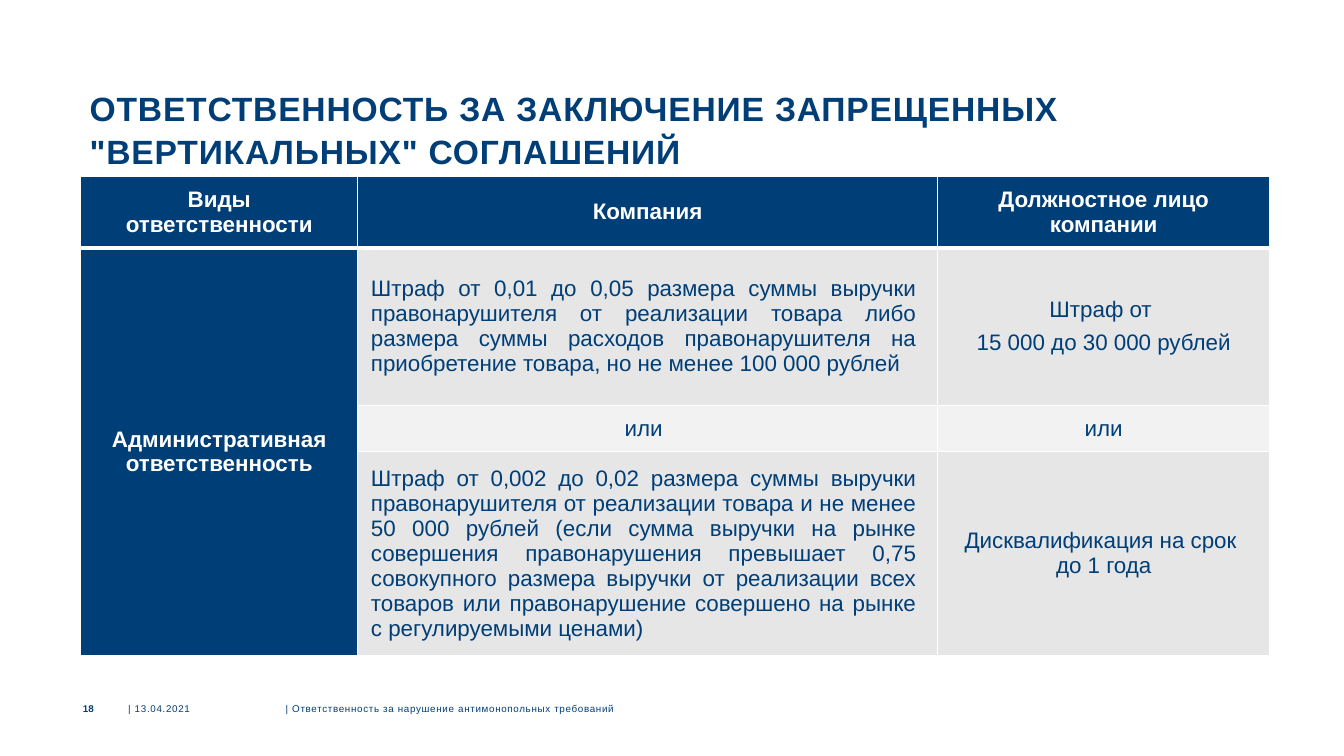
from lxml import etree
from pptx import Presentation
from pptx.dml.color import RGBColor
from pptx.enum.text import MSO_ANCHOR, PP_ALIGN
from pptx.oxml.ns import qn
from pptx.util import Pt

LEFT, CENTER, RIGHT, JUSTIFY = PP_ALIGN.LEFT, PP_ALIGN.CENTER, PP_ALIGN.RIGHT, PP_ALIGN.JUSTIFY
TOP, MIDDLE = MSO_ANCHOR.TOP, MSO_ANCHOR.MIDDLE

THEME = {
    "font": "Arial",
    "navy": "003E77", "white": "FFFFFF", "gray": "E7E6E6",
    "title": 24, "cell": 16, "footer": 7,
}

TITLE = 'ОТВЕТСТВЕННОСТЬ ЗА ЗАКЛЮЧЕНИЕ ЗАПРЕЩЕННЫХ "ВЕРТИКАЛЬНЫХ" СОГЛАШЕНИЙ'
HEADERS = ["Виды ответственности", "Компания", "Должностное лицо компании"]
LIABILITY = "Административная ответственность"
PENALTIES = [
    ("Штраф от 0,01 до 0,05 размера суммы выручки правонарушителя от реализации товара "
     "либо размера суммы расходов правонарушителя на приобретение товара, "
     "но не менее 100 000 рублей",
     ["Штраф от ", "15 000 до 30 000 рублей"]),
    ("или", ["или"]),
    ("Штраф от 0,002 до 0,02 размера суммы выручки правонарушителя от реализации товара "
     "и не менее 50 000 рублей (если сумма выручки на рынке совершения правонарушения "
     "превышает 0,75 совокупного размера выручки от реализации всех товаров "
     "или правонарушение совершено на рынке с регулируемыми ценами)",
     ["Дисквалификация на срок \nдо 1 года"]),
]
FOOTER = [
    ("18", 57, 10, RIGHT, True, 0, False),
    ("| 13.04.2021", 91.5, 110, LEFT, False, 0.5, False),
    ("| Ответственность за нарушение антимонопольных требований", 204, 423, LEFT, False, 0.5, True),
]

COLUMN_WIDTHS = [198, 414, 237.6]
ROW_HEIGHTS = [51, 112.5, 33, 146]
TABLE_LEFT, TABLE_TOP = 57.6, 126
FOOTER_TOP, FOOTER_HEIGHT = 500.4, 11.5
CELL_MARGIN, COMPANY_MARGIN = 9.4, 15.1
PARAGRAPH_GAP = 6
THIN, THICK = 1, 3


def color(name):
    return RGBColor.from_string(THEME[name])


def add_text(paragraph, text, size, color_name, bold=False, spacing=0):
    for index, line in enumerate(text.split("\n")):
        if index:
            paragraph.add_line_break()
        run = paragraph.add_run()
        run.text = line
        run.font.name = THEME["font"]
        run.font.size = Pt(THEME[size])
        run.font.bold = bold
        run.font.color.rgb = color(color_name)
        if spacing:
            run.font._element.set("spc", str(round(spacing * 100)))


def add_box(slide, left, top, width, height, margins, anchor, wrap):
    frame = slide.shapes.add_textbox(Pt(left), Pt(top), Pt(width), Pt(height)).text_frame
    frame.word_wrap = wrap
    frame.vertical_anchor = anchor
    frame.margin_left = frame.margin_right = Pt(margins[0])
    frame.margin_top = frame.margin_bottom = Pt(margins[1])
    return frame.paragraphs[0]


def set_borders(cell, top, bottom):
    properties = cell._tc.get_or_add_tcPr()
    widths = {"a:lnL": THIN, "a:lnR": THIN, "a:lnT": top, "a:lnB": bottom}
    for position, (tag, width) in enumerate(widths.items()):
        line = etree.Element(qn(tag), w=str(Pt(width)))
        fill = etree.SubElement(line, qn("a:solidFill"))
        etree.SubElement(fill, qn("a:srgbClr"), val=THEME["white"])
        properties.insert(position, line)


def fill_cell(cell, paragraphs, fill, text_color, bold, align=CENTER, right=CELL_MARGIN):
    cell.vertical_anchor = MIDDLE
    cell.margin_left, cell.margin_right = Pt(CELL_MARGIN), Pt(right)
    cell.margin_top = cell.margin_bottom = Pt(3.6)
    cell.fill.solid()
    cell.fill.fore_color.rgb = color(fill)
    for index, text in enumerate(paragraphs):
        paragraph = cell.text_frame.add_paragraph() if index else cell.text_frame.paragraphs[0]
        paragraph.alignment = align
        if index:
            paragraph.space_before = Pt(PARAGRAPH_GAP)
        add_text(paragraph, text, "cell", text_color, bold)


def make_translucent(cell):
    shade = cell._tc.tcPr.find(qn("a:solidFill")).find(qn("a:srgbClr"))
    etree.SubElement(shade, qn("a:alpha"), val="50000")


def add_penalty_table(slide):
    table = slide.shapes.add_table(
        len(ROW_HEIGHTS), len(COLUMN_WIDTHS), Pt(TABLE_LEFT), Pt(TABLE_TOP),
        Pt(sum(COLUMN_WIDTHS)), Pt(sum(ROW_HEIGHTS))).table
    table.horz_banding = False
    for column, width in zip(table.columns, COLUMN_WIDTHS):
        column.width = Pt(width)
    for row, height in zip(table.rows, ROW_HEIGHTS):
        row.height = Pt(height)

    for index, header in enumerate(HEADERS):
        fill_cell(table.cell(0, index), [header], "navy", "white", True)
    table.cell(1, 0).merge(table.cell(len(PENALTIES), 0))
    for row, (company, official) in enumerate(PENALTIES, start=1):
        fill_cell(table.cell(row, 0), [LIABILITY] if row == 1 else [], "navy", "white", True)
        is_divider = company == "или"
        fill_cell(table.cell(row, 1), [company], "gray", "navy", False,
                  CENTER if is_divider else JUSTIFY, COMPANY_MARGIN)
        fill_cell(table.cell(row, 2), official, "gray", "navy", False)
        if is_divider:
            make_translucent(table.cell(row, 1))
            make_translucent(table.cell(row, 2))

    for row in range(len(ROW_HEIGHTS)):
        for column in range(len(COLUMN_WIDTHS)):
            set_borders(table.cell(row, column),
                        THICK if row == 1 else THIN, THICK if row == 0 else THIN)


def main():
    presentation = Presentation()
    presentation.slide_width, presentation.slide_height = Pt(960), Pt(540)
    slide = presentation.slides.add_slide(presentation.slide_layouts[6])

    title = add_box(slide, 57, 57, 847, 63, (7.2, 3.6), TOP, True)
    title.line_spacing = Pt(31)
    add_text(title, TITLE, "title", "navy", True, 0.6)

    add_penalty_table(slide)

    for text, left, width, align, bold, spacing, wrap in FOOTER:
        paragraph = add_box(slide, left, FOOTER_TOP, width, FOOTER_HEIGHT, (0, 0), MIDDLE, wrap)
        paragraph.alignment = align
        add_text(paragraph, text, "footer", "navy", bold, spacing)

    presentation.save("out.pptx")


if __name__ == "__main__":
    main()
